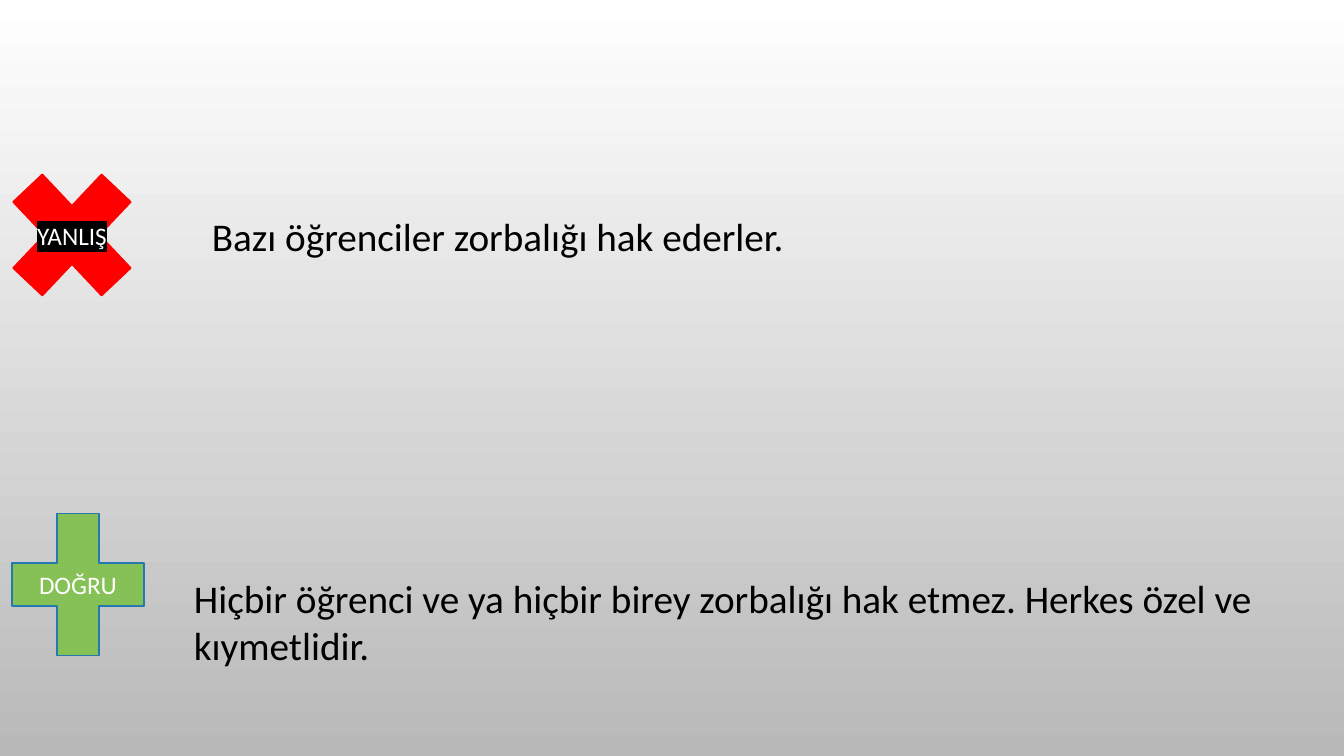
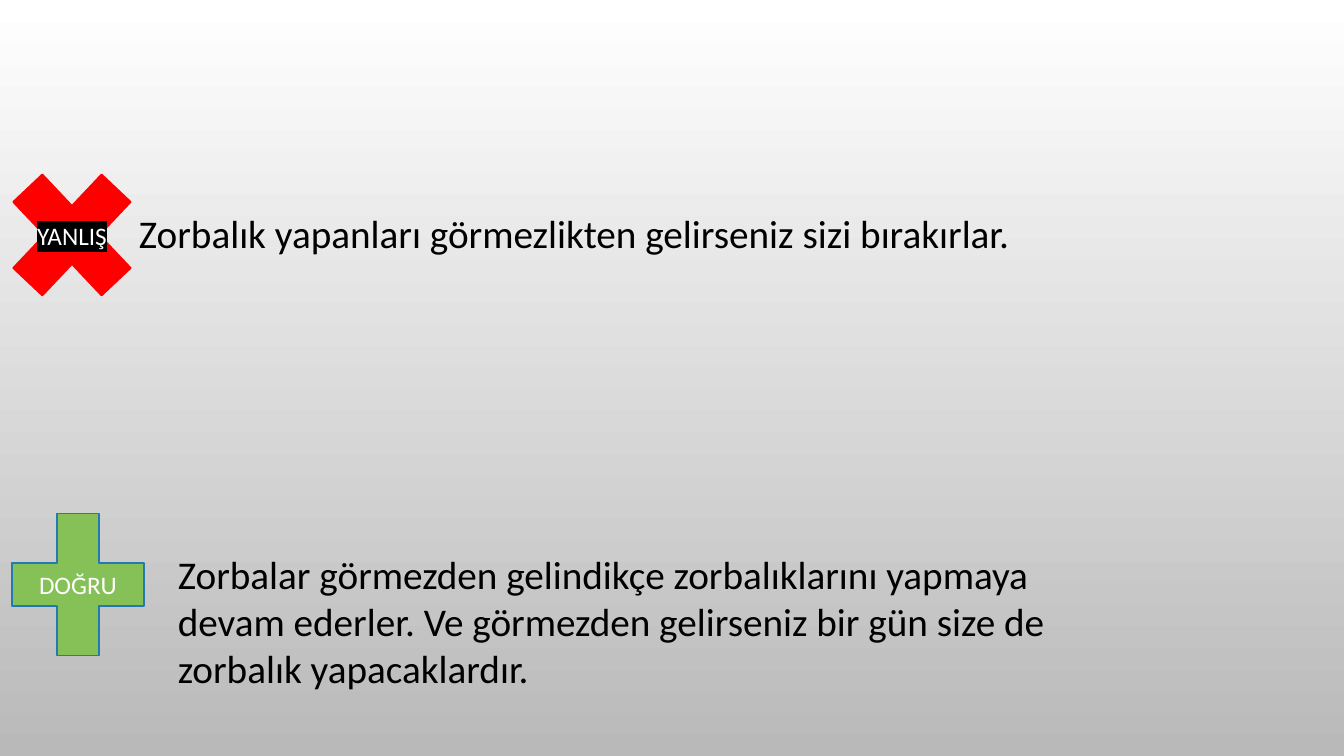
from lxml.etree import SubElement
from pptx import Presentation
from pptx.dml.color import RGBColor
from pptx.enum.shapes import MSO_SHAPE
from pptx.enum.text import MSO_ANCHOR, MSO_AUTO_SIZE, PP_ALIGN
from pptx.oxml.ns import qn
from pptx.util import Pt

WHITE = RGBColor(0xFF, 0xFF, 0xFF)
BLACK = RGBColor(0x00, 0x00, 0x00)
GREY = RGBColor(0xB9, 0xB9, 0xB9)
RED = RGBColor(0xFF, 0x00, 0x00)
GREEN = RGBColor(0x86, 0xC1, 0x57)
BLUE = RGBColor(0x23, 0x79, 0xB0)
FONT = "Calibri"
WIDTH, HEIGHT = 1344, 756
SCALE = 914400 / 100.8

# Signs on every slide: word, shape, box, fill, line, highlight
SIGNS = [
    ("YANLIŞ", MSO_SHAPE.MATH_MULTIPLY, (-13, 145, 170, 180), RED, RED, BLACK),
    ("DOĞRU", MSO_SHAPE.MATH_PLUS, (-12, 488, 180, 193), GREEN, BLUE, None),
]
# One list per slide: the false claim, then the true one
SLIDES = [
    [
        ("Bazı öğrenciler zorbalığı hak ederler.", (202, 207, 738, 57)),
        ("Hiçbir öğrenci ve ya hiçbir birey zorbalığı hak etmez. "
         "Herkes özel ve kıymetlidir.", (184, 569, 1086, 105)),
    ],
    [
        ("Zorbalık yapanları görmezlikten gelirseniz sizi bırakırlar.",
         (129, 204, 1019, 57)),
        ("Zorbalar görmezden gelindikçe zorbalıklarını yapmaya devam ederler. "
         "Ve görmezden gelirseniz bir gün size de zorbalık yapacaklardır.",
         (168, 545, 966, 152)),
    ],
]


def emu(*lengths):
    return [round(n * SCALE) for n in lengths]


def write(frame, text, size, color):
    """Fill a text frame with one styled run and return that run."""
    frame.word_wrap = True
    frame.text = text
    run = frame.paragraphs[0].runs[0]
    run.font.size = Pt(size)
    run.font.color.rgb = color
    run.font.name = FONT
    return run


def mark(run, color):
    """Put a highlight behind a run, right after its text fill."""
    props = run.font._element
    light = SubElement(props, qn("a:highlight"))
    SubElement(light, qn("a:srgbClr"), val=str(color))
    props.find(qn("a:solidFill")).addnext(light)


def add_sign(slide, word, kind, box, fill, line, light):
    sign = slide.shapes.add_shape(kind, *emu(*box))
    sign.shadow.inherit = False
    sign.fill.solid()
    sign.fill.fore_color.rgb = fill
    sign.line.color.rgb = line
    sign.line.width = Pt(1.25)
    frame = sign.text_frame
    frame.vertical_anchor = MSO_ANCHOR.MIDDLE
    run = write(frame, word, 18, WHITE)
    frame.paragraphs[0].alignment = PP_ALIGN.CENTER
    if light is not None:
        mark(run, light)


def add_claim(slide, text, box):
    frame = slide.shapes.add_textbox(*emu(*box)).text_frame
    write(frame, text, 28, BLACK)
    frame.auto_size = MSO_AUTO_SIZE.SHAPE_TO_FIT_TEXT


def paint(slide):
    """Shade the background from white at the top to grey."""
    fill = slide.background.fill
    fill.gradient()
    fill.gradient_angle = 270
    for stop, color, place in zip(fill.gradient_stops, (WHITE, GREY), (0, 1)):
        stop.color.rgb = color
        stop.position = place


def main():
    deck = Presentation()
    deck.slide_width, deck.slide_height = emu(WIDTH, HEIGHT)
    for wrong, right in SLIDES:
        slide = deck.slides.add_slide(deck.slide_layouts[6])
        paint(slide)
        add_claim(slide, *wrong)
        for sign in SIGNS:
            add_sign(slide, *sign)
        add_claim(slide, *right)
    deck.save("out.pptx")


if __name__ == "__main__":
    main()
